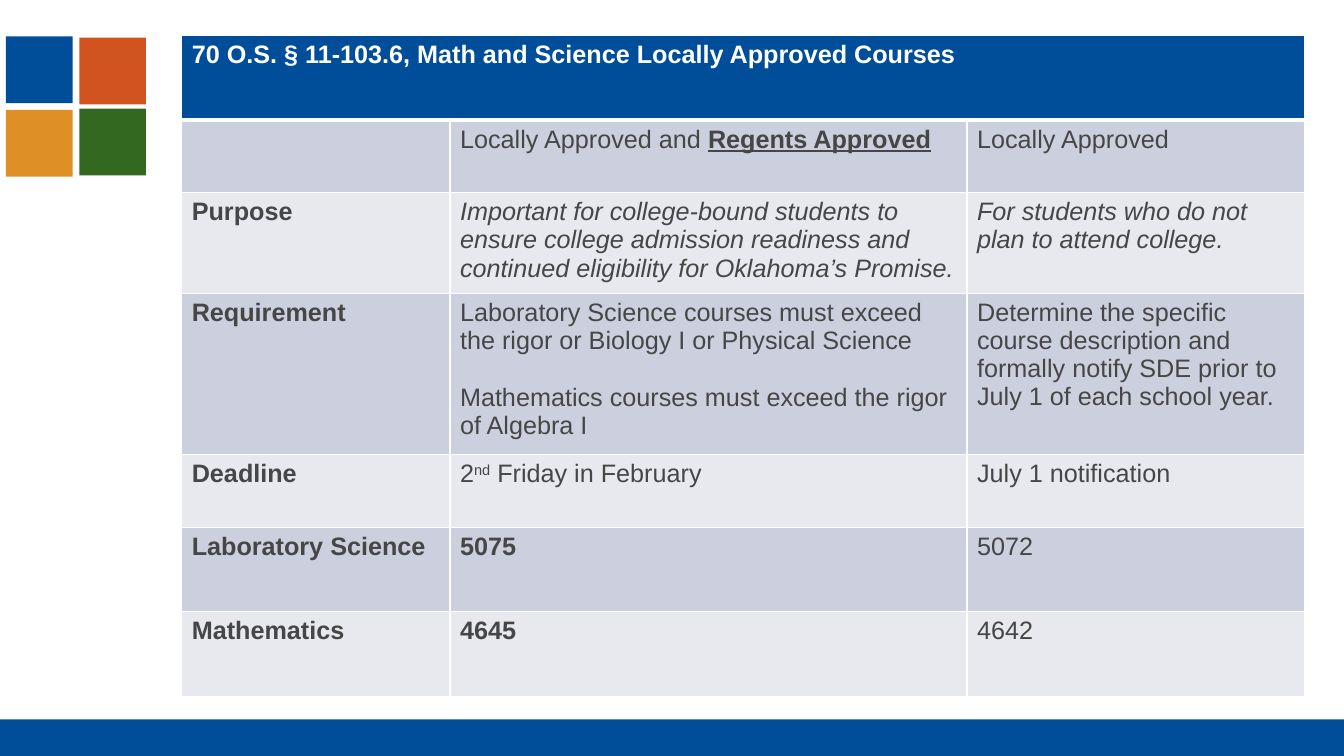
from lxml import etree
from pptx import Presentation
from pptx.dml.color import RGBColor
from pptx.enum.shapes import MSO_SHAPE
from pptx.oxml.ns import qn
from pptx.util import Cm, Pt

RECT = MSO_SHAPE.RECTANGLE
BLUE, RUST, GOLD, GREEN = "004E9A", "D15420", "DE9027", "326820"
WHITE, INK = "FFFFFF", "464646"
BANDS = ("E7E9EF", "CCD0DE")

WIDTHS = (6.76, 13.03, 8.51)
HEIGHTS = (2.13, 1.83, 2.53, 4.07, 1.83, 2.13, 2.13)

# A cell is a list of paragraphs; a paragraph is a list of (text, style) runs.
# Styles: b bold, i italic, u underline, s superscript.
TITLE = [[("70 O.S. § 11-103.6, Math and Science Locally Approved Courses", "b")]]
ROWS = [
    ([],
     [[("Locally Approved and ", ""), ("Regents Approved", "bu")]],
     [[("Locally Approved", "")]]),
    ([[("Purpose", "b")]],
     [[("Important for college‑bound students to ensure college admission "
        "readiness and continued eligibility for Oklahoma’s Promise.", "i")]],
     [[("For students who do not plan to attend college.", "i")]]),
    ([[("Requirement", "b")]],
     [[("Laboratory Science courses must exceed the rigor or Biology I "
        "or Physical Science", "")],
      [("Mathematics courses must exceed the rigor of Algebra I", "")]],
     [[("Determine the specific course description and formally notify SDE "
        "prior to July 1 of each school year.", "")]]),
    ([[("Deadline", "b")]],
     [[("2", ""), ("nd", "s"), (" Friday in February", "")]],
     [[("July 1 notification", "")]]),
    ([[("Laboratory Science", "b")]], [[("5075", "b")]], [[("5072", "")]]),
    ([[("Mathematics", "b")]], [[("4645", "b")]], [[("4642", "")]]),
]


def color(value):
    return RGBColor.from_string(value)


def block(slide, left, top, width, height, fill):
    shape = slide.shapes.add_shape(RECT, Cm(left), Cm(top), Cm(width), Cm(height))
    shape.shadow.inherit = False
    shape.fill.solid()
    shape.fill.fore_color.rgb = color(fill)
    shape.line.fill.background()


def emblem(slide, left, top, side, step):
    """Place four squares, each nudged a little off the grid."""
    tiles = ((0, 0, BLUE), (step, 0.03, RUST),
             (0, step, GOLD), (step, step - 0.03, GREEN))
    for x, y, fill in tiles:
        block(slide, left + x, top + y, side, side, fill)


def border(cell, edge, width):
    line = etree.SubElement(cell._tc.get_or_add_tcPr(), qn("a:ln" + edge))
    line.set("w", str(Pt(width)))
    solid = etree.SubElement(line, qn("a:solidFill"))
    etree.SubElement(solid, qn("a:srgbClr")).set("val", WHITE)


def write(frame, paras, ink):
    for i, runs in enumerate(paras):
        para = frame.paragraphs[0] if i == 0 else frame.add_paragraph()
        if i:
            para.space_before = Pt(20.7)
        for text, style in runs:
            run = para.add_run()
            run.text = text
            font = run.font
            font.name, font.size = "Arial", Pt(18)
            font.color.rgb = color(ink)
            font.bold = "b" in style
            font.italic = "i" in style
            font.underline = "u" in style
            if "s" in style:
                run._r.get_or_add_rPr().set("baseline", "30000")


def dress(cell, paras, fill, ink, above=1, below=1):
    """Give a cell its borders, fill and text."""
    for edge, width in (("L", 1), ("R", 1), ("T", above), ("B", below)):
        border(cell, edge, width)
    cell.fill.solid()
    cell.fill.fore_color.rgb = color(fill)
    write(cell.text_frame, paras, ink)


def courses(slide, left, top):
    frame = slide.shapes.add_table(
        len(HEIGHTS), len(WIDTHS), Cm(left), Cm(top),
        Cm(sum(WIDTHS)), Cm(sum(HEIGHTS)))
    table = frame.table
    for column, width in zip(table.columns, WIDTHS):
        column.width = Cm(width)
    for row, height in zip(table.rows, HEIGHTS):
        row.height = Cm(height)
    table.cell(0, 0).merge(table.cell(0, len(WIDTHS) - 1))
    for c in range(len(WIDTHS)):
        dress(table.cell(0, c), [] if c else TITLE, BLUE, WHITE, below=3)
    for r, row in enumerate(ROWS, 1):
        for c, paras in enumerate(row):
            dress(table.cell(r, c), paras, BANDS[r % 2], INK,
                  above=3 if r == 1 else 1)


def main():
    deck = Presentation()
    deck.slide_width, deck.slide_height = Cm(33.87), Cm(19.05)
    slide = deck.slides.add_slide(deck.slide_layouts[6])
    emblem(slide, 0.15, 0.92, 1.68, 1.85)
    block(slide, 0, 18.13, 33.87, 0.92, BLUE)
    courses(slide, 4.58, 0.9)
    deck.save("out.pptx")


if __name__ == "__main__":
    main()
